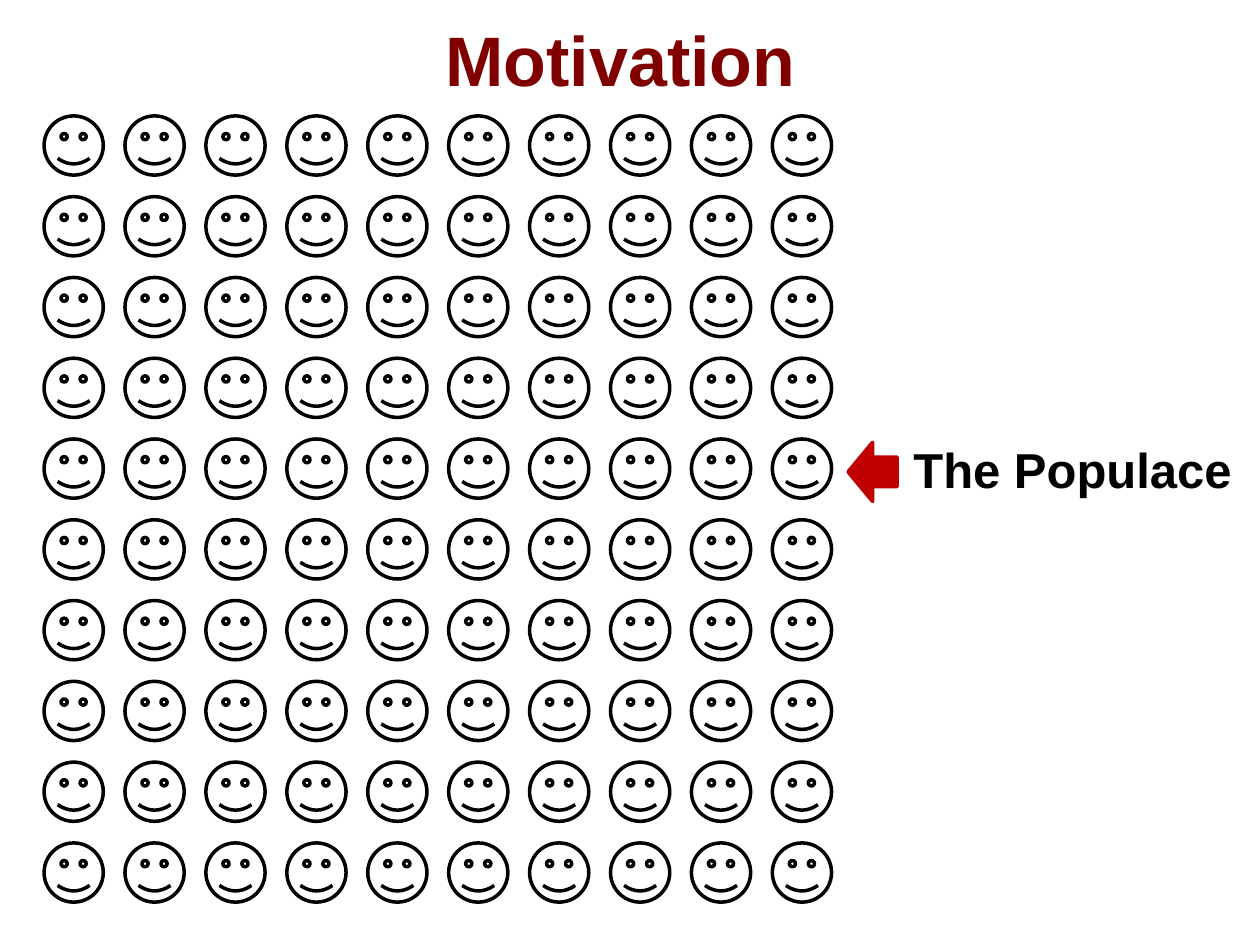
from itertools import product

from pptx import Presentation
from pptx.dml.color import RGBColor
from pptx.enum.shapes import MSO_SHAPE
from pptx.enum.text import MSO_ANCHOR, PP_ALIGN
from pptx.util import Inches, Pt

SMILEY = MSO_SHAPE.SMILEY_FACE
ARROW = MSO_SHAPE.RIGHT_ARROW
TOP = MSO_ANCHOR.TOP
LEFT = PP_ALIGN.LEFT
CENTER = PP_ALIGN.CENTER

THEME = {
    "font": "Arial",
    "title_color": RGBColor.from_string("800000"),
    "arrow_color": RGBColor.from_string("C00000"),
    "ink": RGBColor.from_string("000000"),
    "title_size": Pt(40),
    "label_size": Pt(28),
    "line_width": Pt(2),
}

COLUMNS, ROWS = 10, 10
FIRST_LEFT, LAST_LEFT = Inches(0.35), Inches(6.13)
FIRST_TOP, LAST_TOP = Inches(0.92), Inches(6.69)
FACE_SIZE = Inches(0.47)
COLUMN_STEP = (LAST_LEFT - FIRST_LEFT) / (COLUMNS - 1)
ROW_STEP = (LAST_TOP - FIRST_TOP) / (ROWS - 1)

deck = Presentation()
deck.slide_width = Inches(10)
deck.slide_height = Inches(7.5)
page = deck.slides.add_slide(deck.slide_layouts[6])


def add_text(text, bounds, insets, align, size, color):
    box = page.shapes.add_textbox(*(Inches(length) for length in bounds))
    frame = box.text_frame
    frame.word_wrap = True
    frame.vertical_anchor = TOP
    frame.margin_left, frame.margin_top, frame.margin_right = (
        Inches(inset) for inset in insets
    )
    para = frame.paragraphs[0]
    para.alignment = align
    span = para.add_run()
    span.text = text
    span.font.name = THEME["font"]
    span.font.size = size
    span.font.bold = True
    span.font.color.rgb = color


def add_outlined(kind, left, top, width, color):
    shape = page.shapes.add_shape(kind, round(left), round(top), width, FACE_SIZE)
    shape.shadow.inherit = False
    shape.fill.background()
    shape.line.color.rgb = color
    shape.line.width = THEME["line_width"]
    return shape


add_text("Motivation", (0.5, 0.05, 9, 1.25), (0.1, 0.08, 0.25), CENTER,
         THEME["title_size"], THEME["title_color"])
add_text("The Populace", (6.65, 3.44, 4.33, 0.99), (0.6, 0.05, 0.1), LEFT,
         THEME["label_size"], THEME["ink"])

for column, row in product(range(COLUMNS), range(ROWS)):
    add_outlined(SMILEY, FIRST_LEFT + column * COLUMN_STEP,
                 FIRST_TOP + row * ROW_STEP, FACE_SIZE, THEME["ink"])

arrow = add_outlined(ARROW, Inches(6.73), Inches(3.51), Inches(0.39),
                     THEME["arrow_color"])
arrow.rotation = 180
arrow.fill.solid()
arrow.fill.fore_color.rgb = THEME["arrow_color"]

deck.save("out.pptx")
